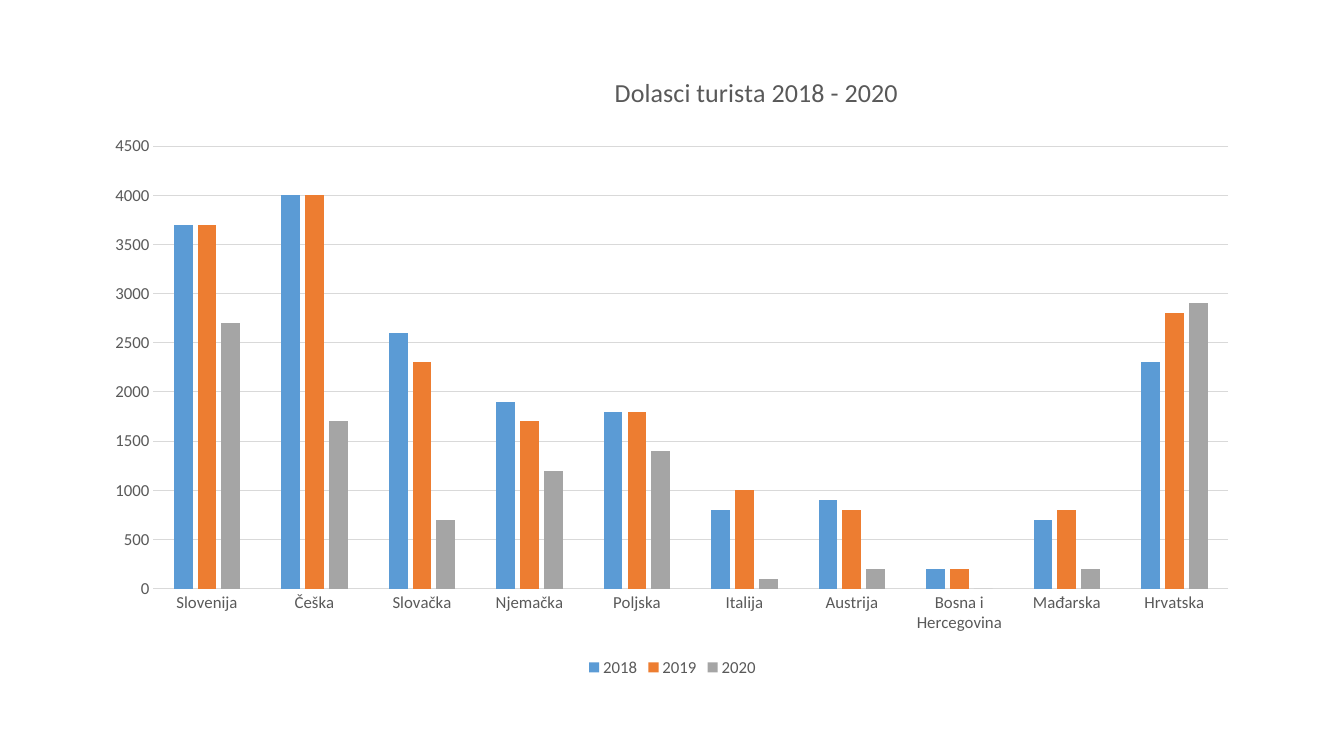
from pptx import Presentation
from pptx.chart.data import CategoryChartData
from pptx.dml.color import RGBColor
from pptx.enum.chart import XL_CHART_TYPE, XL_LEGEND_POSITION, XL_TICK_MARK
from pptx.oxml import parse_xml
from pptx.oxml.ns import nsdecls, qn
from pptx.util import Inches, Pt

COLUMN = XL_CHART_TYPE.COLUMN_CLUSTERED
BOTTOM = XL_LEGEND_POSITION.BOTTOM
NO_TICK = XL_TICK_MARK.NONE
FONT = "Calibri"
GREY = "595959"
PALE = "D9D9D9"
WIDE = Inches(11.5)
HIGH = Inches(6.12)

LANDS = ["Slovenija", "Češka", "Slovačka", "Njemačka", "Poljska", "Italija",
         "Austrija", "Bosna i Hercegovina", "Mađarska", "Hrvatska"]
YEARS = [
    ("2018", "5B9BD5", [3700, 4000, 2600, 1900, 1800, 800, 900, 200, 700, 2300]),
    ("2019", "ED7D31", [3700, 4000, 2300, 1700, 1800, 1000, 800, 200, 800, 2800]),
    ("2020", "A5A5A5", [2700, 1700, 700, 1200, 1400, 100, 200, 0, 200, 2900]),
]


def paint(color, code):
    color.rgb = RGBColor.from_string(code)


def style(font, size, code=GREY):
    font.name = FONT
    font.size = Pt(size)
    font.bold = False
    paint(font.color, code)


def rule(line):
    line.width = Pt(0.75)
    line.fill.solid()
    paint(line.fill.fore_color, PALE)


def place(item, index, **spots):
    for old in item.findall(qn("c:layout")):
        item.remove(old)
    whole = {"x": WIDE, "y": HIGH, "w": WIDE, "h": HIGH}
    modes = "".join(f'<c:{key}Mode val="edge"/>' for key in "xy")
    sizes = "".join(f'<c:{key} val="{Inches(spot) / whole[key]:.4f}"/>'
                    for key, spot in spots.items())
    target = '<c:layoutTarget val="inner"/>' if "w" in spots else ""
    item.insert(index, parse_xml(
        f'<c:layout {nsdecls("c")}><c:manualLayout>{target}{modes}{sizes}'
        '</c:manualLayout></c:layout>'))


def add_chart(slide):
    data = CategoryChartData()
    data.categories = LANDS
    for year, _, counts in YEARS:
        data.add_series(year, counts)
    frame = slide.shapes.add_chart(
        COLUMN, Inches(0.92), Inches(0.64), WIDE, HIGH, data)
    chart = frame.chart
    style(chart.font, 10, "000000")
    return chart


def set_title(chart, text):
    chart.has_title = True
    title = chart.chart_title
    run = title.text_frame.paragraphs[0].add_run()
    run.text = text
    style(run.font, 18.6)
    title.include_in_layout = False
    place(title.element, 1, x=5.13, y=0.05)


def set_axes(chart):
    for axis in (chart.category_axis, chart.value_axis):
        axis.major_tick_mark = NO_TICK
        axis.minor_tick_mark = NO_TICK
        style(axis.tick_labels.font, 12)
    rule(chart.category_axis.format.line)
    value = chart.value_axis
    value.format.line.fill.background()
    value.minimum_scale = 0
    value.maximum_scale = 4500
    value.major_unit = 500
    value.has_major_gridlines = True
    rule(value.major_gridlines.format.line)


def set_bars(chart):
    plot = chart.plots[0]
    plot.gap_width = 219
    plot.overlap = -27
    plot.vary_by_categories = False
    for bars, (_, code, _) in zip(plot.series, YEARS):
        bars.invert_if_negative = False
        bars.format.fill.solid()
        paint(bars.format.fill.fore_color, code)
    area = chart.element.find(".//" + qn("c:plotArea"))
    place(area, 0, x=0.6, y=0.81, w=10.66, h=4.39)


def set_legend(chart):
    chart.has_legend = True
    chart.legend.position = BOTTOM
    chart.legend.include_in_layout = False
    style(chart.legend.font, 12)


def main():
    deck = Presentation()
    deck.slide_width = Inches(13.33)
    deck.slide_height = Inches(7.5)
    slide = deck.slides.add_slide(deck.slide_layouts[6])
    chart = add_chart(slide)
    set_title(chart, "Dolasci turista 2018 - 2020")
    set_axes(chart)
    set_bars(chart)
    set_legend(chart)
    deck.save("out.pptx")


if __name__ == "__main__":
    main()
